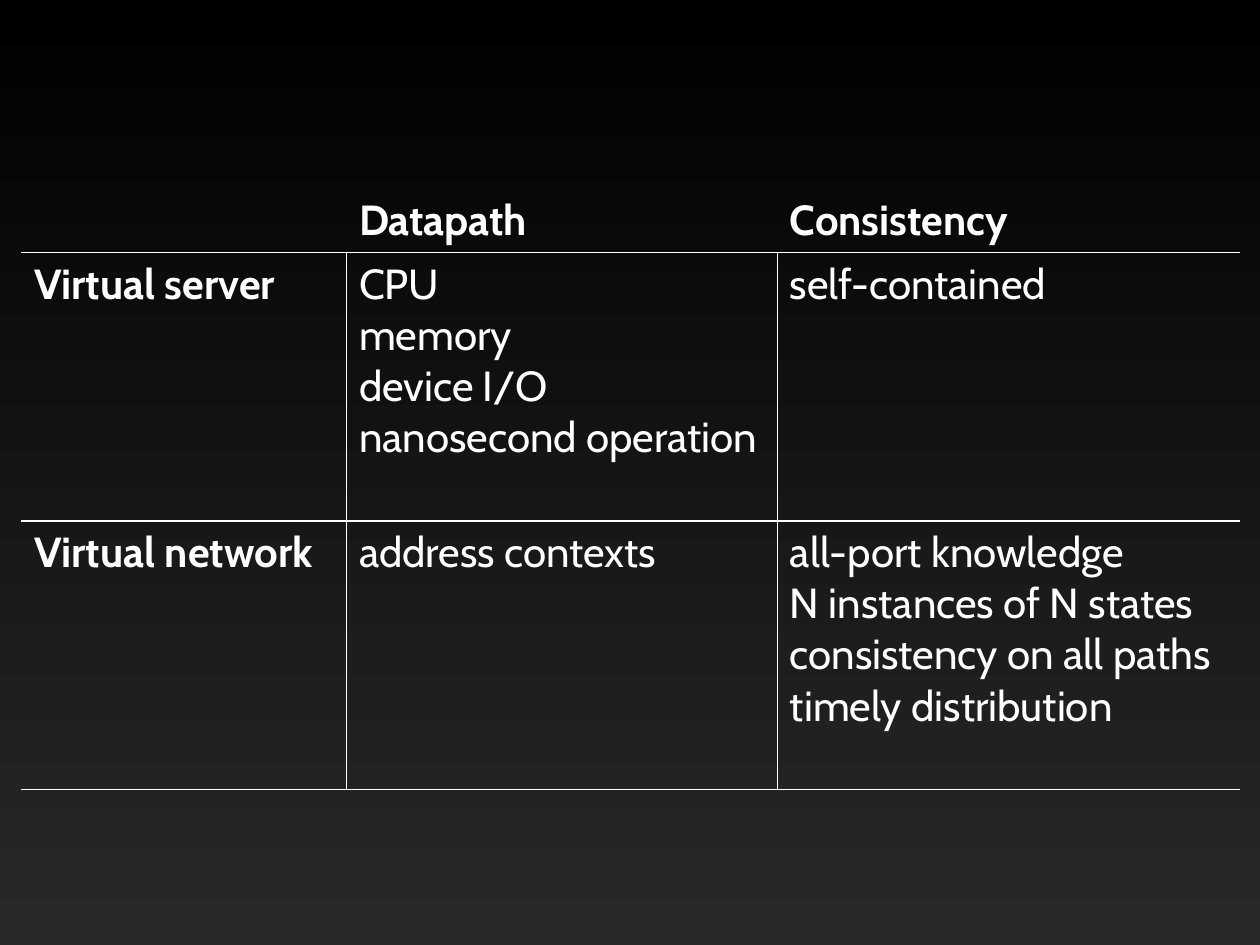
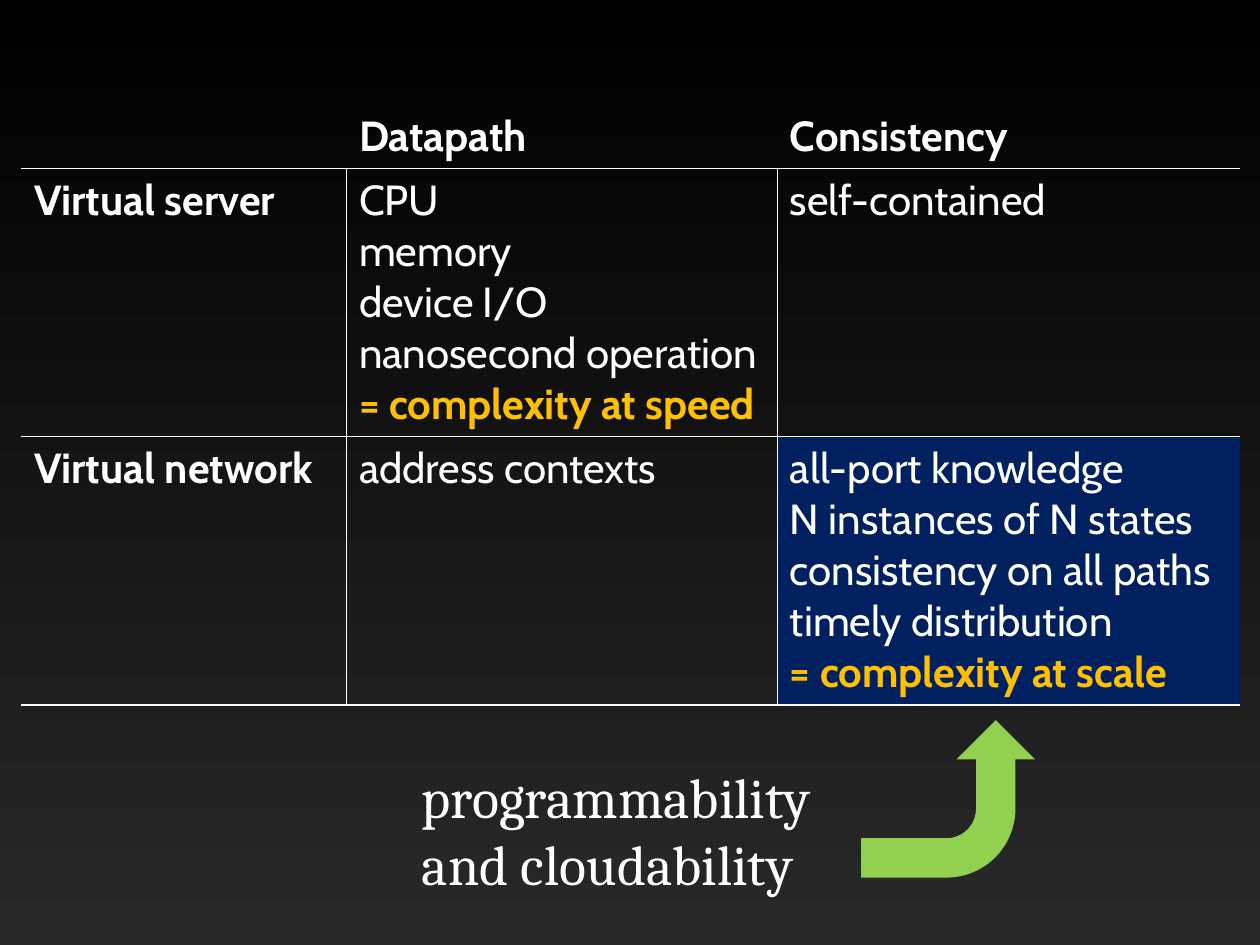
from lxml.etree import SubElement
from pptx import Presentation
from pptx.dml.color import RGBColor
from pptx.enum.shapes import MSO_SHAPE
from pptx.enum.text import MSO_AUTO_SIZE
from pptx.oxml.ns import qn
from pptx.util import Inches, Pt

WHITE, GOLD, NAVY, GREEN = "FFFFFF", "FFC000", "002060", "92D050"
BACKGROUND_TOP, BACKGROUND_BOTTOM = "000000", "292929"
TABLE_FONT, CALLOUT_FONT = "Cabin", "Cambria"
PLAIN_TABLE_STYLE = "{2D5ABB26-0587-4C30-8999-92F81FD0307C}"
COLUMN_WIDTHS = (2.58, 3.42, 3.67)
ROW_HEIGHTS = (0.5, 2.13, 2.13)
SERVER_DATAPATH = ["CPU", "memory", "device I/O", "nanosecond operation"]
NETWORK_CONSISTENCY = [
    "all-port knowledge",
    "N instances of N states",
    "consistency on all paths",
    "timely distribution",
]


def color(hex_code):
    """Return the colour for a hex string."""
    return RGBColor.from_string(hex_code)


def add_page(deck):
    """Add a blank slide with the shared gradient background."""
    page = deck.slides.add_slide(deck.slide_layouts[6])
    fill = page.background.fill
    fill.gradient()
    fill.gradient_angle = 270
    for stop, hex_code in zip(fill.gradient_stops, (BACKGROUND_TOP, BACKGROUND_BOTTOM)):
        stop.color.rgb = color(hex_code)
    return page


def add_span(para, text, font, size, hex_code=WHITE, bold=False):
    """Add one formatted run to a paragraph."""
    span = para.add_run()
    span.text = text
    span.font.name = font
    span.font.size = Pt(size)
    span.font.bold = bold
    span.font.color.rgb = color(hex_code)


def write_lines(frame, lines, font, size, bold=False):
    """Write one paragraph per line, with conclusions (= ...) in bold gold."""
    for index, line in enumerate(lines):
        para = frame.add_paragraph() if index else frame.paragraphs[0]
        conclusion = line.startswith("=")
        add_span(para, line, font, size, GOLD if conclusion else WHITE, bold or conclusion)


def set_borders(cell, sides):
    """Draw thin white borders on the given sides, listed in L, R, T, B order."""
    properties = cell._tc.get_or_add_tcPr()
    for index, side in enumerate(sides):
        line = SubElement(properties, qn(f"a:ln{side}"), w=str(Pt(1)))
        fill = SubElement(line, qn("a:solidFill"))
        SubElement(fill, qn("a:srgbClr"), val=WHITE)
        properties.insert(index, line)


def border_sides(row, column):
    """Return the ruled sides of a cell at this grid position."""
    if row == 0:
        return "B"
    return ("RTB", "LTB", "TB")[column]


def add_comparison(page, top, server_datapath, network_consistency, highlight=None):
    """Add the server and network comparison, with an optional navy cell."""
    contents = [
        [[], ["Datapath"], ["Consistency"]],
        [["Virtual server"], server_datapath, ["self-contained"]],
        [["Virtual network"], ["address contexts"], network_consistency],
    ]
    frame = page.shapes.add_table(
        len(ROW_HEIGHTS), len(COLUMN_WIDTHS), Inches(0.17), Inches(top),
        Inches(sum(COLUMN_WIDTHS)), Inches(sum(ROW_HEIGHTS)))
    table = frame.table
    table.first_row = table.horz_banding = False
    table._tbl.tblPr.find(qn("a:tableStyleId")).text = PLAIN_TABLE_STYLE
    for column, width in zip(table.columns, COLUMN_WIDTHS):
        column.width = Inches(width)
    for row, height in zip(table.rows, ROW_HEIGHTS):
        row.height = Inches(height)
    for row, row_contents in enumerate(contents):
        for column, lines in enumerate(row_contents):
            cell = table.cell(row, column)
            if (row, column) == highlight:
                cell.fill.solid()
                cell.fill.fore_color.rgb = color(NAVY)
            else:
                cell.fill.background()
            set_borders(cell, border_sides(row, column))
            write_lines(cell.text_frame, lines, TABLE_FONT, 24, row == 0 or column == 0)


def add_callout(page, left, top, width, height, lines):
    """Add a large unwrapped text box."""
    box = page.shapes.add_textbox(Inches(left), Inches(top), Inches(width), Inches(height))
    box.text_frame.word_wrap = False
    box.text_frame.auto_size = MSO_AUTO_SIZE.SHAPE_TO_FIT_TEXT
    write_lines(box.text_frame, lines, CALLOUT_FONT, 32)


def add_upward_arrow(page, left, top, width, height):
    """Add a green bent arrow that runs right and then up."""
    arrow = page.shapes.add_shape(
        MSO_SHAPE.BENT_ARROW, Inches(left), Inches(top), Inches(width), Inches(height))
    arrow.shadow.inherit = False
    arrow.fill.solid()
    arrow.fill.fore_color.rgb = color(GREEN)
    arrow.line.fill.background()
    arrow.rotation = 90
    arrow._element.spPr.find(qn("a:xfrm")).set("flipH", "1")


def main():
    """Build and save the two slides."""
    deck = Presentation()
    deck.slide_width, deck.slide_height = Inches(10), Inches(7.5)

    add_comparison(add_page(deck), 1.5, SERVER_DATAPATH, NETWORK_CONSISTENCY)

    page = add_page(deck)
    add_comparison(
        page, 0.83,
        SERVER_DATAPATH + ["= complexity at speed"],
        NETWORK_CONSISTENCY + ["= complexity at scale"],
        highlight=(2, 2))
    add_callout(page, 3.25, 6, 3.47, 1.18, ["programmability", "and cloudability"])
    add_upward_arrow(page, 6.9, 5.65, 1.25, 1.38)

    deck.save("out.pptx")


if __name__ == "__main__":
    main()
